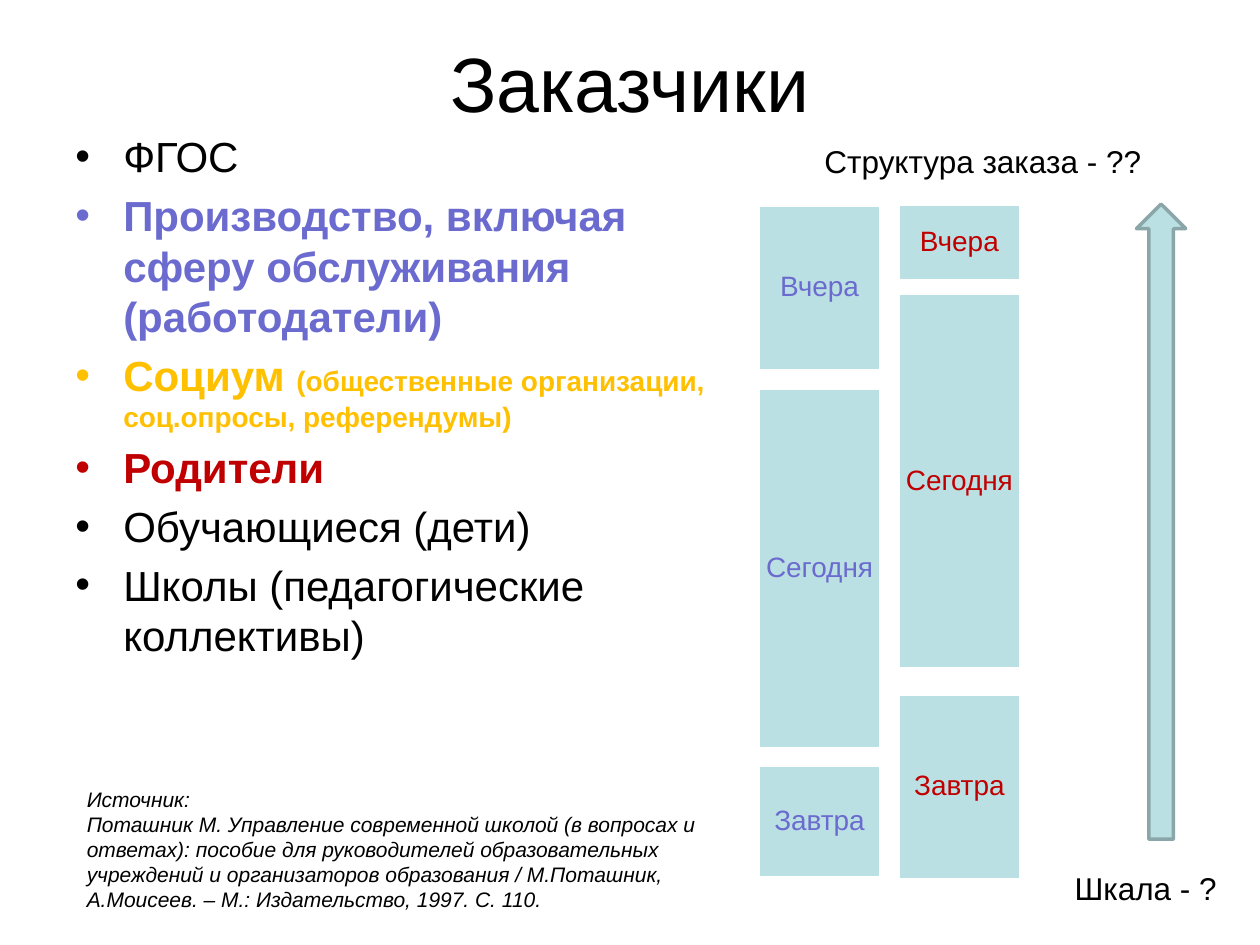
from dataclasses import dataclass
from typing import NamedTuple

from lxml import etree
from pptx import Presentation
from pptx.dml.color import RGBColor
from pptx.enum.shapes import MSO_SHAPE
from pptx.enum.text import MSO_ANCHOR, PP_ALIGN
from pptx.oxml.ns import qn
from pptx.util import Inches, Pt

RECTANGLE, UP_ARROW = MSO_SHAPE.RECTANGLE, MSO_SHAPE.UP_ARROW
LEFT, CENTER = PP_ALIGN.LEFT, PP_ALIGN.CENTER
TOP, MIDDLE = MSO_ANCHOR.TOP, MSO_ANCHOR.MIDDLE

# The slide is a grid of 100 columns by 75 rows
WIDTH, HEIGHT = Inches(10), Inches(7.5)
COLUMN, ROW = WIDTH / 100, HEIGHT / 75


@dataclass(frozen=True)
class Theme:
    font: str = "Arial"
    black: str = "000000"
    white: str = "FFFFFF"
    violet: str = "6B6BCF"
    amber: str = "FFC000"
    red: str = "C00000"
    block: str = "BBE0E3"
    outline: str = "8AA6A8"
    title: int = 44
    body: int = 24
    caption: int = 18
    small: int = 16
    source: int = 12


THEME = Theme()


class Area(NamedTuple):
    column: float
    row: float
    columns: float
    rows: float

    def lengths(self) -> list[int]:
        return [round(self.column * COLUMN), round(self.row * ROW),
                round(self.columns * COLUMN), round(self.rows * ROW)]


@dataclass(frozen=True)
class Customer:
    name: str
    color: str = THEME.black
    bold: bool = False
    detail: str = ""


class Block(NamedTuple):
    label: str
    row: float
    rows: float


@dataclass(frozen=True)
class Stack:
    column: float
    color: str
    blocks: tuple[Block, ...]


CUSTOMERS = (
    Customer("ФГОС"),
    Customer("Производство, включая сферу обслуживания (работодатели)", THEME.violet, True),
    Customer("Социум ", THEME.amber, True,
             "(общественные организации, соц.опросы, референдумы)"),
    Customer("Родители", THEME.red, True),
    Customer("Обучающиеся (дети)"),
    Customer("Школы (педагогические коллективы)"),
)

BLOCK_COLUMNS = 9.7
STACKS = (
    Stack(60.2, THEME.violet, (Block("Вчера", 16.3, 13.1), Block("Сегодня", 30.8, 28.6),
                               Block("Завтра", 60.7, 9))),
    Stack(71.3, THEME.red, (Block("Вчера", 16.2, 6.1), Block("Сегодня", 23.3, 29.8),
                            Block("Завтра", 55.1, 14.7))),
)

SOURCE = (
    "Источник:",
    "Поташник М. Управление современной школой (в вопросах и ответах): пособие для "
    "руководителей образовательных учреждений и организаторов образования / М.Поташник, "
    "А.Моисеев. – М.: Издательство, 1997. С. 110.",
)


def write(paragraph, text: str, *, size: int, color: str = THEME.black,
          bold: bool = False, italic: bool = False, align=LEFT) -> None:
    paragraph.alignment = align
    run = paragraph.add_run()
    run.text = text
    font = run.font
    font.name, font.size = THEME.font, Pt(size)
    font.bold, font.italic = bold, italic
    font.color.rgb = RGBColor.from_string(color)


def add_text_frame(slide, area: Area, anchor=TOP):
    frame = slide.shapes.add_textbox(*area.lengths()).text_frame
    frame.word_wrap, frame.vertical_anchor = True, anchor
    return frame


def next_paragraph(frame, index: int):
    return frame.add_paragraph() if index else frame.paragraphs[0]


def add_bullet(paragraph) -> None:
    properties = paragraph._p.get_or_add_pPr()
    indent = Inches(0.38)
    properties.set("marL", str(indent))
    properties.set("indent", str(-indent))
    etree.SubElement(properties, qn("a:buFont")).set("typeface", THEME.font)
    etree.SubElement(properties, qn("a:buChar")).set("char", "•")


def add_filled_shape(slide, kind, area: Area, line_color: str):
    shape = slide.shapes.add_shape(kind, *area.lengths())
    shape.shadow.inherit = False
    shape.fill.solid()
    shape.fill.fore_color.rgb = RGBColor.from_string(THEME.block)
    shape.line.color.rgb = RGBColor.from_string(line_color)
    shape.line.width = Pt(2)
    return shape


def add_customers(slide, area: Area) -> None:
    frame = add_text_frame(slide, area)
    for index, customer in enumerate(CUSTOMERS):
        paragraph = next_paragraph(frame, index)
        paragraph.space_before = Pt(0.2 * THEME.body)
        add_bullet(paragraph)
        write(paragraph, customer.name, size=THEME.body, color=customer.color,
              bold=customer.bold)
        if customer.detail:
            write(paragraph, customer.detail, size=THEME.small, color=customer.color,
                  bold=customer.bold)


def add_stack(slide, stack: Stack) -> None:
    for block in stack.blocks:
        area = Area(stack.column, block.row, BLOCK_COLUMNS, block.rows)
        frame = add_filled_shape(slide, RECTANGLE, area, THEME.white).text_frame
        frame.word_wrap, frame.vertical_anchor = True, MIDDLE
        frame.margin_left = frame.margin_right = Inches(0.04)
        frame.margin_top = frame.margin_bottom = Inches(0.04)
        paragraph = frame.paragraphs[0]
        paragraph.line_spacing = 0.9
        write(paragraph, block.label, size=THEME.small, color=stack.color, align=CENTER)


def main() -> None:
    presentation = Presentation()
    presentation.slide_width, presentation.slide_height = WIDTH, HEIGHT
    slide = presentation.slides.add_slide(presentation.slide_layouts[6])

    # Title and list of customers
    title = add_text_frame(slide, Area(5, 3, 90, 6.9), MIDDLE)
    write(title.paragraphs[0], "Заказчики", size=THEME.title, align=CENTER)
    add_customers(slide, Area(5, 9.9, 56.8, 46.5))

    # Structure of the order
    for stack in STACKS:
        add_stack(slide, stack)
    heading = add_text_frame(slide, Area(57.9, 10.8, 40.2, 4))
    write(heading.paragraphs[0], "Структура заказа - ??", size=THEME.caption, align=CENTER)

    # Scale
    scale = add_text_frame(slide, Area(84.3, 68.5, 15.7, 4))
    write(scale.paragraphs[0], "Шкала - ?", size=THEME.caption)
    add_filled_shape(slide, UP_ARROW, Area(90.2, 16.2, 3.9, 50.4), THEME.outline)

    # Source
    source = add_text_frame(slide, Area(5.9, 61.9, 52.8, 11.1))
    for index, text in enumerate(SOURCE):
        write(next_paragraph(source, index), text, size=THEME.source, italic=True)

    presentation.save("out.pptx")


if __name__ == "__main__":
    main()
